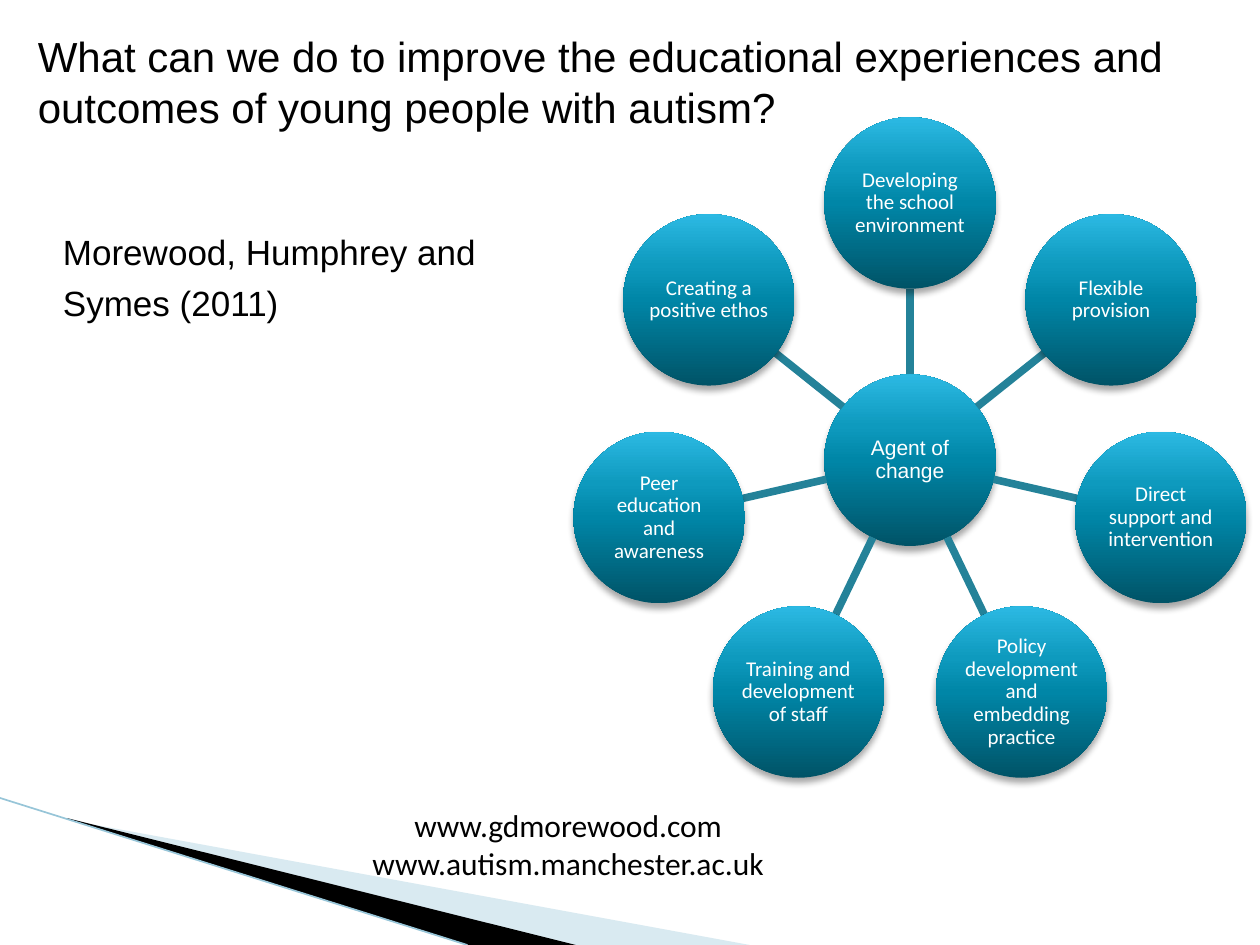
from math import cos, pi, sin

from pptx import Presentation
from pptx.dml.color import RGBColor
from pptx.enum.shapes import MSO_CONNECTOR, MSO_SHAPE
from pptx.enum.text import MSO_ANCHOR, MSO_AUTO_SIZE, PP_ALIGN
from pptx.oxml import parse_xml
from pptx.oxml.ns import nsdecls
from pptx.util import Pt

STRAIGHT, OVAL = MSO_CONNECTOR.STRAIGHT, MSO_SHAPE.OVAL
MIDDLE, NO_AUTOFIT = MSO_ANCHOR.MIDDLE, MSO_AUTO_SIZE.NONE
LEFT, CENTER = PP_ALIGN.LEFT, PP_ALIGN.CENTER
GRADIENT = [(0, "005367"), (50, "0086A7"), (70, "0E9ABE"), (100, "2CB9E3")]
HUB = "Agent of change"
SPOKES = [
    "Developing the school environment",
    "Flexible provision",
    "Direct support and intervention",
    "Policy development and embedding practice",
    "Training and development of staff",
    "Peer education and awareness",
    "Creating a positive ethos",
]


def color(value):
    """Turn a hex string into a colour."""
    return RGBColor.from_string(value)


def set_font(para, name, size, value="000000"):
    """Set the font of a whole paragraph."""
    para.font.name, para.font.size = name, Pt(size)
    para.font.color.rgb = color(value)


def add_line(page, start, end, value, width):
    """Draw a straight line without a shadow."""
    line = page.shapes.add_connector(STRAIGHT, *map(Pt, start + end))
    line.line.color.rgb, line.line.width = color(value), Pt(width)
    line._element.spPr.append(parse_xml(f"<a:effectLst {nsdecls('a')}/>"))


def add_wedge(page, points, value, opacity=100):
    """Draw a filled outline through the given points."""
    (left, top), *rest = [(Pt(x), Pt(y)) for x, y in points]
    builder = page.shapes.build_freeform(left, top)
    builder.add_line_segments(rest, close=True)
    wedge = builder.convert_to_shape()
    wedge.shadow.inherit = False
    wedge.line.fill.background()
    wedge.fill.solid()
    wedge.fill.fore_color.rgb = color(value)
    if opacity < 100:
        wedge.fill._xPr.solidFill[0].append(
            parse_xml(f'<a:alpha {nsdecls("a")} val="{opacity * 1000}"/>'))


def add_corner(page, left, top, width, height):
    """Draw the swoosh in the bottom left corner."""
    right, bottom = left + width, top + height
    add_wedge(page, [(left + 39.6, top + 12.7), (right, bottom),
                     (left + 328.3, bottom), (left + 39.6, top + 12)], "A0CBDC", 40)
    add_wedge(page, [(left + 38.2, top + 11.5), (left + 329, bottom),
                     (left + 267.8, bottom), (left + 38.9, top + 12)], "000000")
    add_line(page, (left, top), (left + 267.1, bottom), "97C5D8", 0.95)


def add_title(page, left, top, width, height):
    """Place the slide title."""
    title = page.shapes.title
    title.left, title.top, title.width, title.height = map(Pt, (left, top, width, height))
    frame = title.text_frame
    frame.text = ("What can we do to improve the educational experiences "
                  "and outcomes of young people with autism?")
    frame.auto_size, frame.vertical_anchor = NO_AUTOFIT, MIDDLE
    frame.paragraphs[0].alignment = LEFT
    set_font(frame.paragraphs[0], "Arial", 24)


def add_authors(page, left, top, width, height):
    """Place the authors as two hanging paragraphs."""
    frame = page.shapes.add_textbox(*map(Pt, (left, top, width, height))).text_frame
    frame.word_wrap = True
    frame.text = "Morewood, Humphrey and\nSymes (2011)"
    for para in frame.paragraphs:
        properties = para._p.get_or_add_pPr()
        properties.set("marL", str(Pt(28.8)))
        properties.set("indent", str(-Pt(20.16)))
        set_font(para, "Arial", 20)
    frame.paragraphs[1].space_before = Pt(5)


def add_websites(page, left, top, width, height):
    """Place the web addresses."""
    frame = page.shapes.add_textbox(*map(Pt, (left, top, width, height))).text_frame
    frame.word_wrap = True
    frame.text = "www.gdmorewood.com www.autism.manchester.ac.uk"
    frame.paragraphs[0].alignment = CENTER
    set_font(frame.paragraphs[0], "Calibri", 18)


def add_bubble(page, center, size, text, font):
    """Draw a shaded circle with its label."""
    x, y = center
    bubble = page.shapes.add_shape(
        OVAL, Pt(x - size / 2), Pt(y - size / 2), Pt(size), Pt(size))
    bubble.line.fill.background()
    stops = "".join(f'<a:gs pos="{place * 1000}"><a:srgbClr val="{value}"/></a:gs>'
                    for place, value in GRADIENT)
    properties = bubble._element.spPr
    properties.insert(2, parse_xml(
        f'<a:gradFill {nsdecls("a")} rotWithShape="1"><a:gsLst>{stops}</a:gsLst>'
        '<a:lin ang="16200000" scaled="0"/></a:gradFill>'))
    properties.append(parse_xml(
        f'<a:effectLst {nsdecls("a")}><a:outerShdw blurRad="{Pt(4)}" dist="{Pt(3)}" '
        'dir="5400000" rotWithShape="0"><a:srgbClr val="000000"><a:alpha val="35000"/>'
        '</a:srgbClr></a:outerShdw></a:effectLst>'))
    frame = bubble.text_frame
    frame.word_wrap, frame.vertical_anchor = True, MIDDLE
    frame.margin_left = frame.margin_right = Pt(0.6)
    frame.margin_top = frame.margin_bottom = Pt(0.6)
    frame.text = text
    para = frame.paragraphs[0]
    para.alignment, para.line_spacing = CENTER, 0.9
    set_font(para, font, 12, "FFFFFF")


def add_wheel(page, x, y, radius, size):
    """Draw the hub with its spokes spread evenly from the top."""
    def at(angle, distance):
        """Find a point at an angle and distance from the hub."""
        return x + distance * sin(angle), y - distance * cos(angle)

    add_bubble(page, (x, y), size, HUB, "Arial")
    for index, text in enumerate(SPOKES):
        angle = 2 * pi * index / len(SPOKES)
        add_line(page, at(angle, size / 2), at(angle, radius - size / 2), "248299", 4.33)
        add_bubble(page, at(angle, radius), size, text, "Calibri")


def main():
    """Build the slide and save it."""
    deck = Presentation()
    deck.slide_width, deck.slide_height = Pt(720), Pt(540)
    page = deck.slides.add_slide(deck.slide_layouts[5])
    add_corner(page, 0, 456, 428.4, 84)
    add_websites(page, 144.7, 457.2, 360, 51)
    add_title(page, 14.4, 15.1, 692, 62.6)
    add_authors(page, 20.2, 128.2, 294.5, 356.4)
    add_wheel(page, 520, 263, 147, 98)
    deck.save("out.pptx")


if __name__ == "__main__":
    main()
